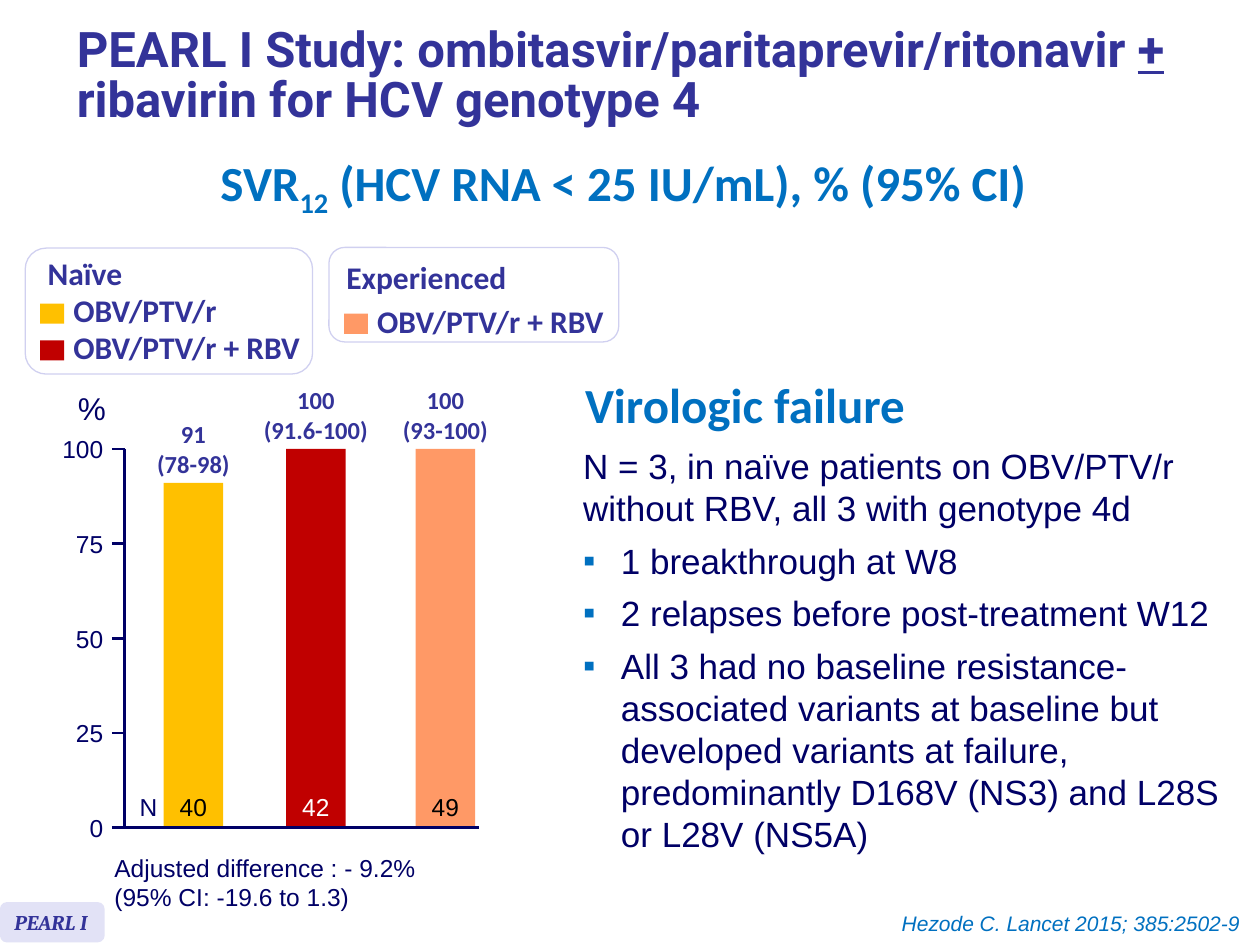
import copy

import pptx
import pptx.dml.color
import pptx.enum.shapes
import pptx.enum.text
import pptx.oxml.ns
import pptx.util
from lxml import etree

Pt = pptx.util.Pt
Align = pptx.enum.text.PP_ALIGN
Anchor = pptx.enum.text.MSO_ANCHOR
Fit = pptx.enum.text.MSO_AUTO_SIZE
Shape = pptx.enum.shapes.MSO_SHAPE
Link = pptx.enum.shapes.MSO_CONNECTOR
qn = pptx.oxml.ns.qn

NAVY, BLUE, VIOLET = "000066", "0070C0", "333399"
GOLD, RED, PEACH = "FFC000", "C00000", "FF9966"
WHITE, BLACK, RIM, PALE = "FFFFFF", "000000", "D0D0F0", "E2E2F6"

PLAIN = {"name": "Arial", "size": Pt(14), "color": NAVY}
BODY = PLAIN | {"size": Pt(20)}
VALUE = {"name": "Calibri", "size": Pt(14), "bold": True, "color": VIOLET}
KEY = VALUE | {"size": Pt(18)}
HEAD = VALUE | {"size": Pt(28), "color": BLUE}
TITLE = HEAD | {"name": "Roboto", "color": VIOLET}
BADGE = VALUE | {"name": "Cambria", "size": Pt(12), "italic": True}
CITE = PLAIN | {"size": Pt(12), "italic": True, "color": BLUE}


def hue(code):
    return pptx.dml.color.RGBColor.from_string(code)


class Deck:
    def __init__(self):
        self.file = pptx.Presentation()
        self.file.slide_width = Pt(720)
        self.file.slide_height = Pt(540)
        self.slide = self.file.slides.add_slide(self.file.slide_layouts[1])
        self.items = self.slide.shapes

    def group(self):
        self.items = self.slide.shapes.add_group_shape().shapes

    def ungroup(self):
        self.items = self.slide.shapes

    def style(self, font, look):
        for key, value in look.items():
            if key == "color":
                font.color.rgb = hue(value)
            elif key == "base":
                font._element.set("baseline", str(value * 1000))
            else:
                setattr(font, key, value)

    def typeset(self, frame, lines, look, **rules):
        for at, line in enumerate(lines):
            para = frame.paragraphs[0] if at == 0 else frame.add_paragraph()
            for key, value in rules.items():
                setattr(para, key, value)
            for part, extra in [(line, {})] if isinstance(line, str) else line:
                start = len(para.runs)
                for row, text in enumerate(part.split("\n")):
                    if row:
                        para.add_line_break()
                    para.add_run().text = text
                for run in para.runs[start:]:
                    self.style(run.font, look | extra)
            for gap in para._p.findall(qn("a:br")):
                gap.append(copy.deepcopy(para.runs[0].font._element))

    def text(self, box, lines, look, pad=None, wrap=False, anchor=Anchor.TOP, **rules):
        item = self.items.add_textbox(*map(Pt, box))
        frame = item.text_frame
        frame.word_wrap = wrap
        frame.auto_size = Fit.SHAPE_TO_FIT_TEXT
        frame.vertical_anchor = anchor
        if pad is not None:
            for side in ("left", "top", "right", "bottom"):
                setattr(frame, "margin_" + side, Pt(pad))
        self.typeset(frame, lines, look, **rules)

    def block(self, box, fill, rim=None, kind=Shape.RECTANGLE):
        item = self.items.add_shape(kind, *map(Pt, box))
        item.shadow.inherit = False
        item.fill.solid()
        item.fill.fore_color.rgb = hue(fill)
        if rim:
            item.line.color.rgb = hue(rim)
            item.line.width = Pt(0.75)
        else:
            item.line.fill.background()
        return item

    def line(self, *ends):
        item = self.items.add_connector(Link.STRAIGHT, *map(Pt, ends))
        item.line.color.rgb = hue(NAVY)
        item.line.width = Pt(1.5)
        etree.SubElement(item._element.spPr, qn("a:effectLst"))

    def holder(self, index, box, anchor):
        item = self.slide.placeholders[index]
        item.left, item.top, item.width, item.height = map(Pt, box)
        frame = item.text_frame
        frame.word_wrap = True
        frame.auto_size = Fit.NONE
        frame.vertical_anchor = anchor
        return frame

    def title(self, box, line):
        frame = self.holder(0, box, Anchor.MIDDLE)
        self.typeset(frame, [line], TITLE, alignment=Align.LEFT, line_spacing=0.85)

    def list(self, box, lines):
        frame = self.holder(1, box, Anchor.TOP)
        self.typeset(frame, lines, BODY, alignment=Align.LEFT)
        for at, para in enumerate(frame.paragraphs):
            inset = Pt(21.6) if at else 0
            props = para._p.get_or_add_pPr()
            props.set("marL", str(inset))
            props.set("indent", str(-inset))
            para.space_before = Pt(6 if at else 0)
            if at:
                tint = etree.SubElement(props, qn("a:buClr"))
                etree.SubElement(tint, qn("a:srgbClr")).set("val", BLUE)
                etree.SubElement(props, qn("a:buFont")).set("typeface", "Arial")
                etree.SubElement(props, qn("a:buChar")).set("char", "▪")
            else:
                etree.SubElement(props, qn("a:buNone"))

    def legend(self, panel, head, rows):
        self.group()
        self.block(panel, WHITE, RIM, Shape.ROUNDED_RECTANGLE)
        self.text(head[0], [head[1]], KEY)
        for left, top, wide, fill, name in rows:
            self.block((left, top, 13.7, 11.5), fill)
            self.text((left + 11.8, top - 10.5, wide, 29), [name], KEY)
        self.ungroup()

    def chart(self, bars):
        base, unit, axis, tick = 473, 2.165, 71.3, 64
        for mark in range(0, 101, 25):
            y = base - mark * unit
            self.text((35, y - 8.6, 24, 17.3), [str(mark)], PLAIN, pad=0,
                      anchor=Anchor.MIDDLE, alignment=Align.RIGHT)
            if mark:
                self.line(tick, y, axis, y)
        for mid, value, span, count, fill, ink in bars:
            top = base - value * unit
            self.block((mid - 17, top, 34, base - top), fill)
            self.text((mid - 37, top - 43.6, 74, 48), [str(value), span], VALUE,
                      pad=7.2, alignment=Align.CENTER)
            self.text((mid - 15, 448.6, 30, 24.5), [str(count)],
                      PLAIN | {"color": ink}, anchor=Anchor.BOTTOM,
                      alignment=Align.CENTER)
        self.line(axis, base - 100 * unit, axis, base)
        self.line(tick, base, 273.6, base)
        self.text((37.4, 219, 30, 29), ["%"], PLAIN | {"size": Pt(18)})
        self.text((72.7, 448.6, 24.5, 24.5), ["N"], PLAIN, anchor=Anchor.BOTTOM)

    def badge(self, box, name):
        item = self.block(box, PALE, kind=Shape.ROUNDED_RECTANGLE)
        item.text_frame.word_wrap = False
        item.text_frame.vertical_anchor = Anchor.MIDDLE
        self.typeset(item.text_frame, [name], BADGE, alignment=Align.LEFT)


def main():
    deck = Deck()
    deck.title((36.7, 5.8, 657.4, 77), [
        ("PEARL I Study: ombitasvir/paritaprevir/ritonavir ", {}),
        ("+", {"underline": True}),
        (" ribavirin for HCV genotype 4", {})])
    deck.list((326, 250.6, 385.2, 240.5), [
        "N = 3, in naïve patients on OBV/PTV/r\nwithout RBV, all 3 with genotype 4d",
        "1 breakthrough at W8",
        "2 relapses before post-treatment W12",
        "All 3 had no baseline resistance-associated variants at baseline but "
        "developed variants at failure, predominantly D168V (NS3) and L28S "
        "or L28V (NS5A)"])
    heads = [
        ((113, 98, 492.5, 33), [("SVR", {}), ("12", {"base": -25}),
                                (" (HCV RNA < 25 IU/mL), % (95% CI) ", {})]),
        ((326, 220.3, 199.4, 33), "Virologic failure")]
    for box, line in heads:
        deck.text(box, [line], HEAD, alignment=Align.CENTER, line_spacing=Pt(23.6))
    deck.legend((14.4, 141.8, 164.2, 72), ((20.2, 141.4, 57.6, 29), "Naïve"), [
        (23, 173.5, 99.4, GOLD, "OBV/PTV/r"),
        (23, 194.5, 147.6, RED, "OBV/PTV/r + RBV")])
    deck.legend((188, 141.4, 165.6, 54), ((190.8, 144, 106.6, 29), "Experienced"), [
        (196.6, 179.3, 147.6, PEACH, "OBV/PTV/r + RBV")])
    deck.chart([
        (110.5, 91, "(78-98)", 40, GOLD, BLACK),
        (180.5, 100, "(91.6-100)", 42, RED, WHITE),
        (254.5, 100, "(93-100)", 49, PEACH, BLACK)])
    deck.text((58.3, 483.8, 189.4, 41), [
        "Adjusted difference : - 9.2%", "(95% CI: -19.6 to 1.3)"], PLAIN, wrap=True)
    deck.badge((0, 515.5, 59.8, 23), "PEARL I")
    deck.text((506.2, 517, 213, 21.6), ["Hezode C. Lancet 2015; 385:2502-9 "], CITE,
              alignment=Align.RIGHT)
    deck.file.save("out.pptx")


if __name__ == "__main__":
    main()
